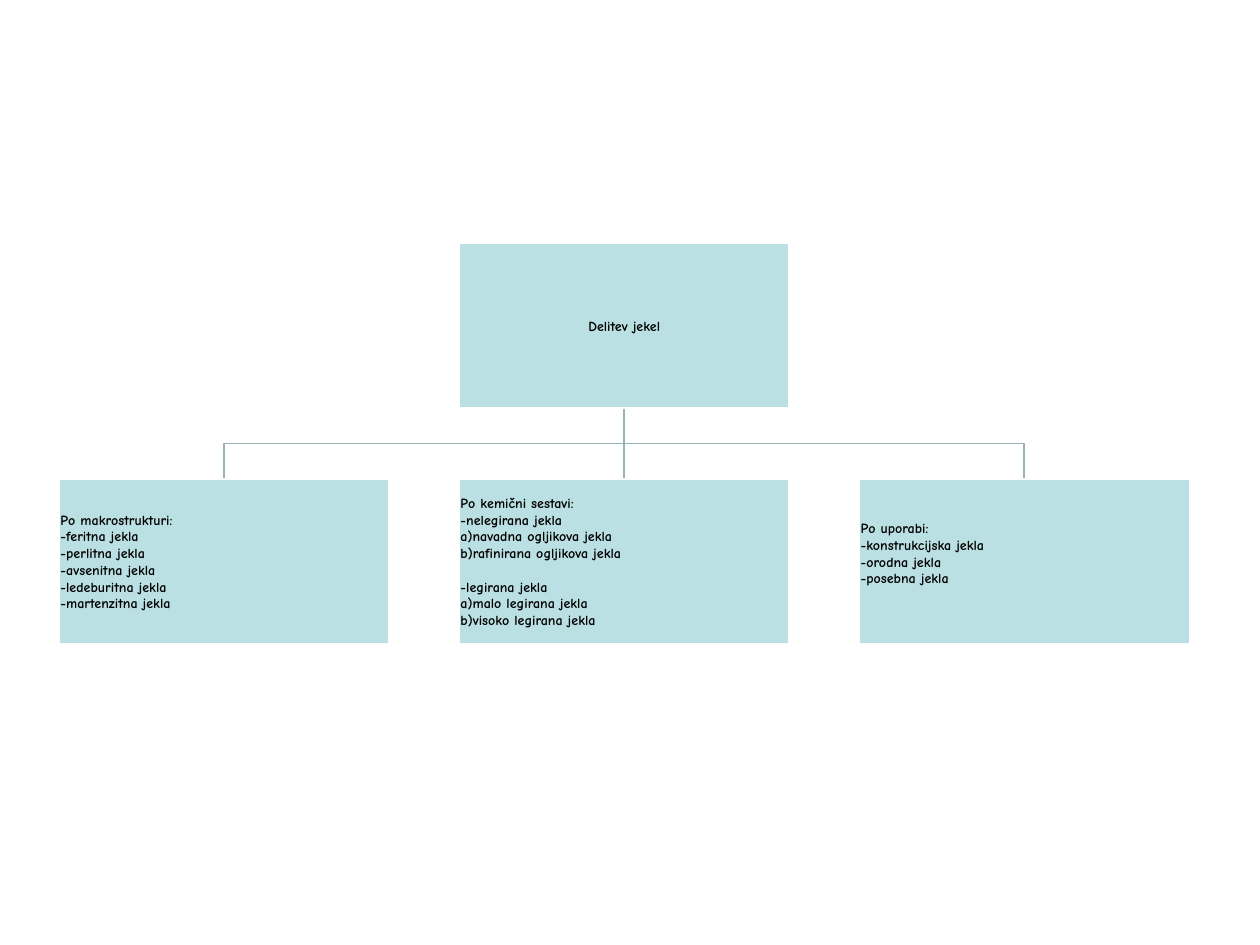
from pptx import Presentation
from pptx.dml.color import RGBColor
from pptx.enum.shapes import MSO_CONNECTOR, MSO_SHAPE
from pptx.enum.text import MSO_ANCHOR, PP_ALIGN
from pptx.oxml.ns import qn
from pptx.util import Inches, Pt
from lxml import etree

STRAIGHT = MSO_CONNECTOR.STRAIGHT
RECTANGLE = MSO_SHAPE.RECTANGLE
MIDDLE = MSO_ANCHOR.MIDDLE
LEFT, CENTER = PP_ALIGN.LEFT, PP_ALIGN.CENTER

FONT = "Comic Neue"
BOX_WIDTH, BOX_HEIGHT = 2.62, 1.31
FIRST_LEFT, COLUMN_STEP = 0.47, 3.175
ROOT_TOP, BRANCH_TOP = 1.93, 3.8
ROOT_BOTTOM = ROOT_TOP + BOX_HEIGHT
TEXT_LINE = 9.5  # points

ROOT = "Delitev jekel"
# Each branch is a list of groups; groups are parted by one line of space.
BRANCHES = [
    [["Po makrostrukturi:", "-feritna jekla", "-perlitna jekla",
      "-avsenitna jekla", "-ledeburitna jekla", "-martenzitna jekla"]],
    [["Po kemični sestavi:", "-nelegirana jekla",
      "a)navadna ogljikova jekla", "b)rafinirana ogljikova jekla"],
     ["-legirana jekla", "a)malo legirana jekla", "b)visoko legirana jekla"]],
    [["Po uporabi:", "-konstrukcijska jekla", "-orodna jekla",
      "-posebna jekla"]],
]


def color(hex_code):
    return RGBColor.from_string(hex_code)


def column_left(column):
    return FIRST_LEFT + column * COLUMN_STEP


def column_center(column):
    return column_left(column) + BOX_WIDTH / 2


def style_line(line, hex_code):
    line.color.rgb = color(hex_code)
    line.width = Pt(1)


def add_elbow(page, start_x, end_x):
    """Draw an open line from the root down, across and down to a branch."""
    middle_y = (ROOT_BOTTOM + BRANCH_TOP) / 2
    points = [(start_x, middle_y), (end_x, middle_y), (end_x, BRANCH_TOP)]
    builder = page.shapes.build_freeform(Inches(start_x), Inches(ROOT_BOTTOM))
    builder.add_line_segments(
        [(Inches(x), Inches(y)) for x, y in points], close=False)
    elbow = builder.convert_to_shape()
    elbow.shadow.inherit = False
    elbow.fill.background()
    style_line(elbow.line, "96B3B6")


def add_straight(page, x):
    connector = page.shapes.add_connector(
        STRAIGHT, Inches(x), Inches(ROOT_BOTTOM), Inches(x), Inches(BRANCH_TOP))
    style_line(connector.line, "96B3B6")
    etree.SubElement(connector._element.spPr, qn("a:effectLst"))
    return connector


def add_box(page, column, top, groups, alignment=LEFT, bottom_inset=0.01):
    box = page.shapes.add_shape(
        RECTANGLE, Inches(column_left(column)), Inches(top),
        Inches(BOX_WIDTH), Inches(BOX_HEIGHT))
    box.shadow.inherit = False
    box.fill.solid()
    box.fill.fore_color.rgb = color("BBE0E3")
    style_line(box.line, "FFFFFF")
    frame = box.text_frame
    frame.word_wrap = True
    frame.vertical_anchor = MIDDLE
    frame.margin_left = frame.margin_right = frame.margin_top = Inches(0.01)
    frame.margin_bottom = Inches(bottom_inset)
    para = frame.paragraphs[0]
    for group_index, group in enumerate(groups):
        for line_index, text in enumerate(group):
            if group_index or line_index:
                para = frame.add_paragraph()
            if group_index and not line_index:
                para.space_before = Pt(TEXT_LINE)
            para.alignment = alignment
            span = para.add_run()
            span.text = text
            span.font.name = FONT
            span.font.size = Pt(8)
            span.font.bold = True
            span.font.color.rgb = color("000000")
    return box


def main():
    deck = Presentation()
    deck.slide_width, deck.slide_height = Inches(10), Inches(7.5)
    page = deck.slides.add_slide(deck.slide_layouts[6])

    add_elbow(page, column_center(1), column_center(2))
    trunk = add_straight(page, column_center(1))
    add_elbow(page, column_center(1), column_center(0))

    root_box = add_box(page, 1, ROOT_TOP, [[ROOT]], CENTER)
    bottom_insets = [0.01, 0.01, 0.14]
    branch_boxes = [
        add_box(page, column, BRANCH_TOP, groups, bottom_inset=inset)
        for column, (groups, inset) in enumerate(zip(BRANCHES, bottom_insets))]
    trunk.begin_connect(root_box, 2)
    trunk.end_connect(branch_boxes[1], 0)

    deck.save("out.pptx")


if __name__ == "__main__":
    main()
